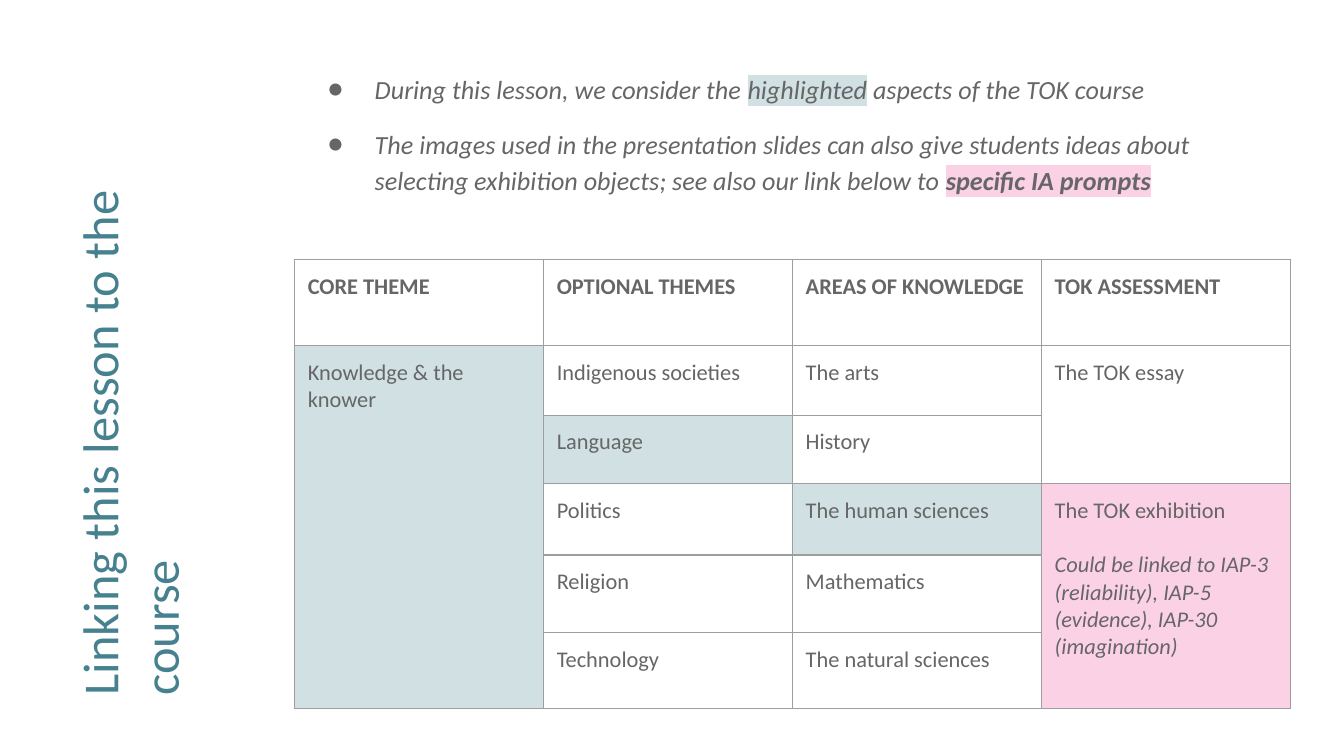
from lxml.etree import SubElement
from pptx import Presentation
from pptx.dml.color import RGBColor
from pptx.enum.text import MSO_ANCHOR, MSO_AUTO_SIZE, PP_ALIGN
from pptx.oxml import parse_xml
from pptx.oxml.ns import nsdecls, qn
from pptx.util import Inches, Pt

FONT = "Calibri"
TEAL = RGBColor(0x45, 0x81, 0x8E)
GREY = RGBColor(0x66, 0x66, 0x66)
BORDER = RGBColor(0x9E, 0x9E, 0x9E)
PALE_TEAL = RGBColor(0xD0, 0xE0, 0xE3)
PINK = RGBColor(0xFB, 0xD1, 0xE6)
WHITE = RGBColor(0xFF, 0xFF, 0xFF)

BULLETS = [
    [("During this lesson, we consider the ", None, False),
     ("highlighted", PALE_TEAL, False),
     (" aspects of the TOK course", None, False)],
    [("The images used in the presentation slides can also give students ideas about "
      "selecting exhibition objects; see also our link below to ", None, False),
     ("specific IA prompts", PINK, True)],
]
TABLE_WIDTH = 7.41
ROW_HEIGHTS = [0.64, 0.52, 0.51, 0.53, 0.58, 0.56]
ROWS = [
    ["CORE THEME", "OPTIONAL THEMES", "AREAS OF KNOWLEDGE", "TOK ASSESSMENT"],
    ["Knowledge & the knower", "Indigenous societies", "The arts", "The TOK essay"],
    ["", "Language", "History", ""],
    ["", "Politics", "The human sciences", "The TOK exhibition"],
    ["", "Religion", "Mathematics", ""],
    ["", "Technology", "The natural sciences", ""],
]
EXHIBITION_NOTE = ("Could be linked to IAP-3 (reliability), IAP-5 (evidence), "
                   "IAP-30 (imagination)")
MERGES = [((1, 0), (5, 0)), ((1, 3), (2, 3)), ((3, 3), (5, 3))]
FILLS = {(1, 0): PALE_TEAL, (2, 1): PALE_TEAL, (3, 2): PALE_TEAL, (3, 3): PINK}


def style_run(r, size, color, bold=False, italic=False):
    r.font.name = FONT
    r.font.size = Pt(size)
    r.font.bold = bold
    r.font.italic = italic
    r.font.color.rgb = color


def set_frame(tf):
    tf.word_wrap = True
    tf.auto_size = MSO_AUTO_SIZE.NONE
    tf.vertical_anchor = MSO_ANCHOR.TOP
    tf.margin_left = tf.margin_right = tf.margin_top = tf.margin_bottom = Inches(0.1)


def highlight(r, color):
    mark = parse_xml(f'<a:highlight {nsdecls("a")}><a:srgbClr val="{color}"/></a:highlight>')
    r._r.get_or_add_rPr().find(qn("a:solidFill")).addnext(mark)


def set_bullet(p):
    pPr = p._p.get_or_add_pPr()
    pPr.set("marL", str(Inches(0.5)))
    pPr.set("indent", str(Inches(-0.35)))
    SubElement(SubElement(pPr, qn("a:buClr")), qn("a:srgbClr"), val=str(GREY))
    SubElement(pPr, qn("a:buFont"), typeface=FONT)
    SubElement(pPr, qn("a:buChar"), char="●")


def set_borders(cell):
    tcPr = cell._tc.get_or_add_tcPr()
    for i, side in enumerate(("lnL", "lnR", "lnT", "lnB")):
        tcPr.insert(i, parse_xml(
            f'<a:{side} {nsdecls("a")} w="{Pt(0.75)}"><a:solidFill>'
            f'<a:srgbClr val="{BORDER}"/></a:solidFill></a:{side}>'))


def add_title(s):
    sp = s.shapes.title
    sp.left, sp.top, sp.width, sp.height = map(Inches, (-1.32, 2.13, 4.87, 1.42))
    sp.rotation = 270
    tf = sp.text_frame
    tf.text = "Linking this lesson to the course"
    set_frame(tf)
    p = tf.paragraphs[0]
    p.alignment = PP_ALIGN.LEFT
    p.line_spacing = 1.0
    style_run(p.runs[0], 27, TEAL)


def add_bullets(s):
    sp = s.shapes.add_textbox(Inches(2.19), Inches(0.41), Inches(7.47), Inches(1.22))
    tf = sp.text_frame
    set_frame(tf)
    for i, parts in enumerate(BULLETS):
        p = tf.add_paragraph() if i else tf.paragraphs[0]
        p.line_spacing = 1.15
        p.space_before = Pt(10 if i else 0)
        set_bullet(p)
        for text, mark, bold in parts:
            r = p.add_run()
            r.text = text
            style_run(r, 14, GREY, bold=bold, italic=True)
            if mark:
                highlight(r, mark)


def fill_cell(cell, text, fill, header):
    cell.margin_left = cell.margin_right = Inches(0.1)
    cell.margin_top = cell.margin_bottom = Inches(0.1)
    cell.fill.solid()
    cell.fill.fore_color.rgb = fill
    set_borders(cell)
    if text:
        p = cell.text_frame.paragraphs[0]
        p.text = text
        style_run(p.runs[0], 12, GREY, bold=header)


def add_theme_table(s):
    table = s.shapes.add_table(
        len(ROWS), len(ROWS[0]), Inches(2.19), Inches(1.93),
        Inches(TABLE_WIDTH), Inches(sum(ROW_HEIGHTS))).table
    table.first_row = table.horz_banding = False
    for i, texts in enumerate(ROWS):
        table.rows[i].height = Inches(ROW_HEIGHTS[i])
        for j, text in enumerate(texts):
            fill_cell(table.cell(i, j), text, FILLS.get((i, j), WHITE), i == 0)
    p = table.cell(3, 3).text_frame.add_paragraph()
    p.text = EXHIBITION_NOTE
    p.space_before = Pt(14.6)
    style_run(p.runs[0], 12, GREY, italic=True)
    for first, last in MERGES:
        table.cell(*first).merge(table.cell(*last))


def main():
    prs = Presentation()
    prs.slide_width = Inches(10)
    prs.slide_height = Inches(10 * 9 / 16)
    s = prs.slides.add_slide(prs.slide_layouts[5])
    add_title(s)
    add_bullets(s)
    add_theme_table(s)
    prs.save("out.pptx")


if __name__ == "__main__":
    main()
